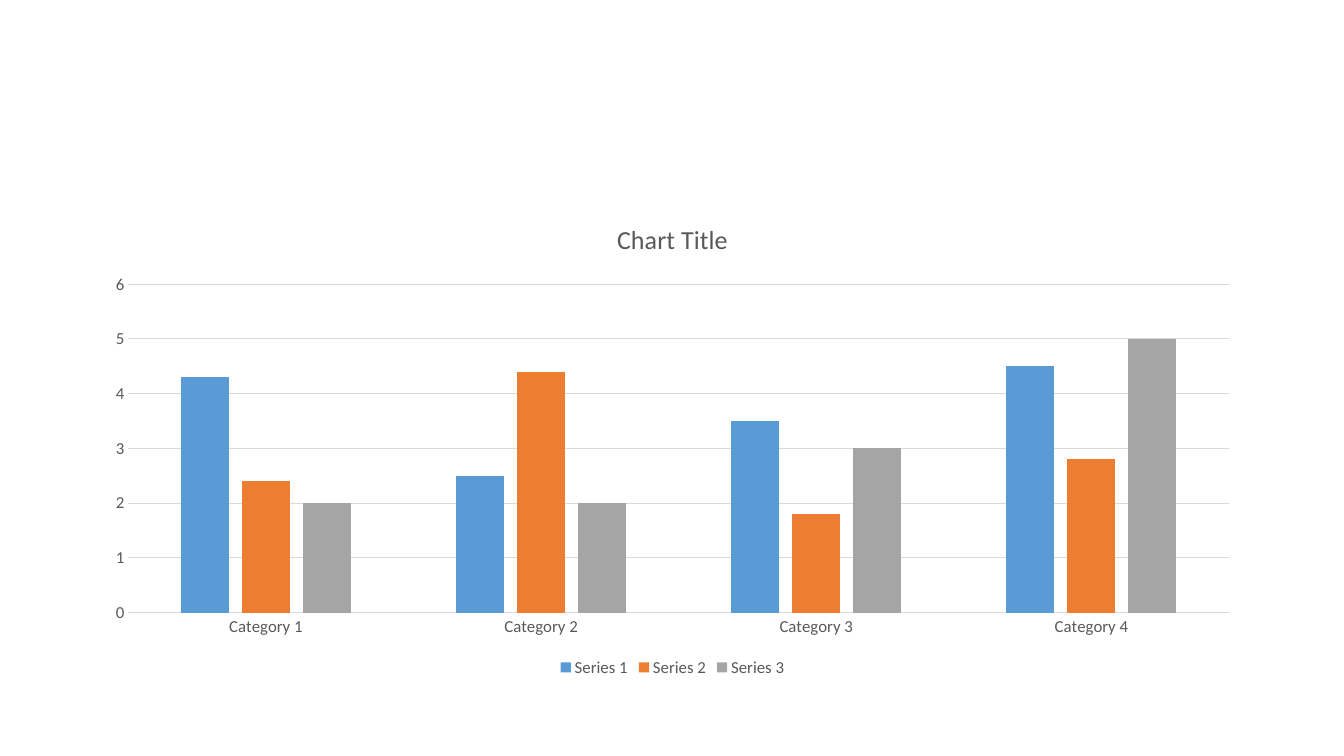
from dataclasses import dataclass

from pptx import Presentation
from pptx.chart.data import CategoryChartData as Data
from pptx.dml.color import RGBColor as RGB
from pptx.enum.chart import XL_CHART_TYPE as Kind
from pptx.enum.chart import XL_LEGEND_POSITION as Spot
from pptx.enum.chart import XL_TICK_MARK as Tick
from pptx.util import Inches, Pt

TITLE = "Chart Title"
CATS = ["Category 1", "Category 2", "Category 3", "Category 4"]
SERIES = {
    "Series 1": (4.3, 2.5, 3.5, 4.5),
    "Series 2": (2.4, 4.4, 1.8, 2.8),
    "Series 3": (2, 2, 3, 5),
}
SIZE = (13.33, 7.5)
FRAME = (0.92, 2, 11.5, 4.76)


@dataclass(frozen=True)
class Theme:
    face: str = "Calibri"
    text: str = "595959"
    rule: str = "D9D9D9"
    bars: tuple = ("5B9BD5", "ED7D31", "A5A5A5")
    body: float = 12
    head: float = 18.6
    line: float = 0.75


THEME = Theme()


def set_font(font, size):
    font.name = THEME.face
    font.size = Pt(size)
    font.bold = False
    font.color.rgb = RGB.from_string(THEME.text)


def set_rule(line):
    line.color.rgb = RGB.from_string(THEME.rule)
    line.width = Pt(THEME.line)


def add_bars(slide):
    data = Data()
    data.categories = CATS
    for name, vals in SERIES.items():
        data.add_series(name, vals)
    box = [Inches(n) for n in FRAME]
    return slide.shapes.add_chart(Kind.COLUMN_CLUSTERED, *box, data).chart


def style_bars(chart):
    set_font(chart.font, THEME.body)
    plot = chart.plots[0]
    plot.gap_width = 219
    plot.overlap = -27
    plot.vary_by_categories = False
    for bar, color in zip(plot.series, THEME.bars):
        bar.format.fill.solid()
        bar.format.fill.fore_color.rgb = RGB.from_string(color)
        bar.invert_if_negative = False


def style_axes(chart):
    cat, val = chart.category_axis, chart.value_axis
    for axis in (cat, val):
        axis.major_tick_mark = axis.minor_tick_mark = Tick.NONE
        set_font(axis.tick_labels.font, THEME.body)
    set_rule(cat.format.line)
    val.format.line.fill.background()
    val.minimum_scale, val.maximum_scale, val.major_unit = 0, 6, 1
    val.tick_labels.number_format = "General"
    val.tick_labels.number_format_is_linked = False
    set_rule(val.major_gridlines.format.line)


def add_labels(chart):
    chart.has_title = True
    frame = chart.chart_title.text_frame
    frame.text = TITLE
    set_font(frame.paragraphs[0].runs[0].font, THEME.head)
    chart.chart_title.include_in_layout = False
    chart.has_legend = True
    chart.legend.position = Spot.BOTTOM
    chart.legend.include_in_layout = False
    set_font(chart.legend.font, THEME.body)


def main():
    deck = Presentation()
    deck.slide_width, deck.slide_height = (Inches(n) for n in SIZE)
    slide = deck.slides.add_slide(deck.slide_layouts[6])
    chart = add_bars(slide)
    style_bars(chart)
    style_axes(chart)
    add_labels(chart)
    deck.save("out.pptx")


if __name__ == "__main__":
    main()
